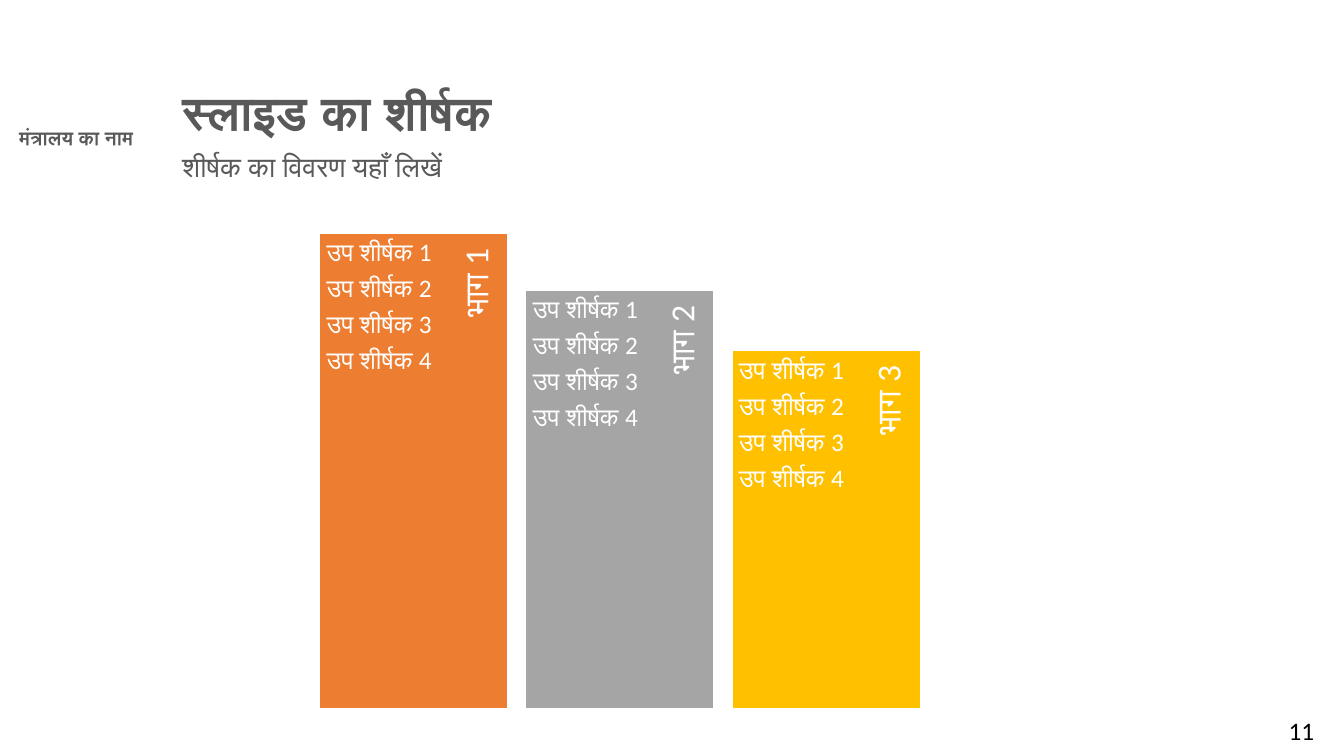
from pptx import Presentation
from pptx.dml.color import RGBColor
from pptx.enum.shapes import MSO_SHAPE
from pptx.enum.text import MSO_ANCHOR, PP_ALIGN
from pptx.util import Pt

RECT = MSO_SHAPE.RECTANGLE
TOP, MIDDLE = MSO_ANCHOR.TOP, MSO_ANCHOR.MIDDLE
LEFT, CENTER, RIGHT = PP_ALIGN.LEFT, PP_ALIGN.CENTER, PP_ALIGN.RIGHT
GREY, WHITE, BLACK = "595959", "FFFFFF", "000000"
INSETS = (7.2, 3.6, 7.2, 3.6)
BASE, START, PITCH, WIDTH = 506.6, 228.4, 147.2, 134.6
BARS = [("भाग 1", 166.5, "ED7D31"), ("भाग 2", 207.2, "A5A5A5"), ("भाग 3", 250.4, "FFC000")]
ITEMS = [f"उप शीर्षक {n}" for n in range(1, 5)]


def color(code):
    """Turn a hex string into a colour."""
    return RGBColor.from_string(code)


def add_text(slide, box, lines, size, code=GREY, bold=False, font="Calibri",
             align=LEFT, anchor=TOP, insets=INSETS, after=0, spacing=0.9):
    """Add a text box with one paragraph per line."""
    shape = slide.shapes.add_textbox(*map(Pt, box))
    frame = shape.text_frame
    frame.word_wrap = True
    frame.vertical_anchor = anchor
    (frame.margin_left, frame.margin_top,
     frame.margin_right, frame.margin_bottom) = map(Pt, insets)
    for i, line in enumerate(lines):
        para = frame.add_paragraph() if i else frame.paragraphs[0]
        para.alignment = align
        para.line_spacing = spacing
        para.space_after = Pt(after)
        run = para.add_run()
        run.text = line
        run.font.name = font
        run.font.size = Pt(size)
        run.font.bold = bold
        run.font.color.rgb = color(code)
    return shape


def add_bar(slide, left, top, label, fill):
    """Add a coloured column with its upright label and its list."""
    height = BASE - top
    bar = slide.shapes.add_shape(RECT, Pt(left), Pt(top), Pt(WIDTH), Pt(height))
    bar.shadow.inherit = False
    bar.fill.solid()
    bar.fill.fore_color.rgb = color(fill)
    bar.line.color.rgb = color(WHITE)
    bar.line.width = Pt(1)
    length, thick = 0.9 * height, 35.3
    box = (left + 113.8 - length / 2, top + (length - thick) / 2, length, thick)
    title = add_text(slide, box, [label], 24, WHITE, align=RIGHT, anchor=MIDDLE,
                     insets=(7.2, 0, 10.8, 2.2), after=8.4)
    title.rotation = 270
    add_text(slide, (left, top, 95.8, height + 1.4), ITEMS, 18, WHITE,
             insets=(5, 5, 5, 5), after=6.3)


def main():
    """Build the slide and save it."""
    deck = Presentation()
    deck.slide_width, deck.slide_height = Pt(960), Pt(540)
    slide = deck.slides.add_slide(deck.slide_layouts[6])
    add_text(slide, (-7.9, 88.6, 124.6, 25.2), ["मंत्रालय का नाम"], 14,
             bold=True, font="Arial", align=CENTER)
    add_text(slide, (123.1, 60.5, 692, 39.6), ["स्लाइड का शीर्षक"], 34, bold=True)
    add_text(slide, (123.1, 105.8, 692, 45.4), ["शीर्षक का विवरण यहाँ लिखें"], 20)
    for i, (label, top, fill) in enumerate(BARS):
        add_bar(slide, START + i * PITCH, top, label, fill)
    add_text(slide, (899.3, 507.6, 60.5, 32.4), ["11"], 18, BLACK,
             align=CENTER, spacing=1.0)
    deck.save("out.pptx")


if __name__ == "__main__":
    main()
